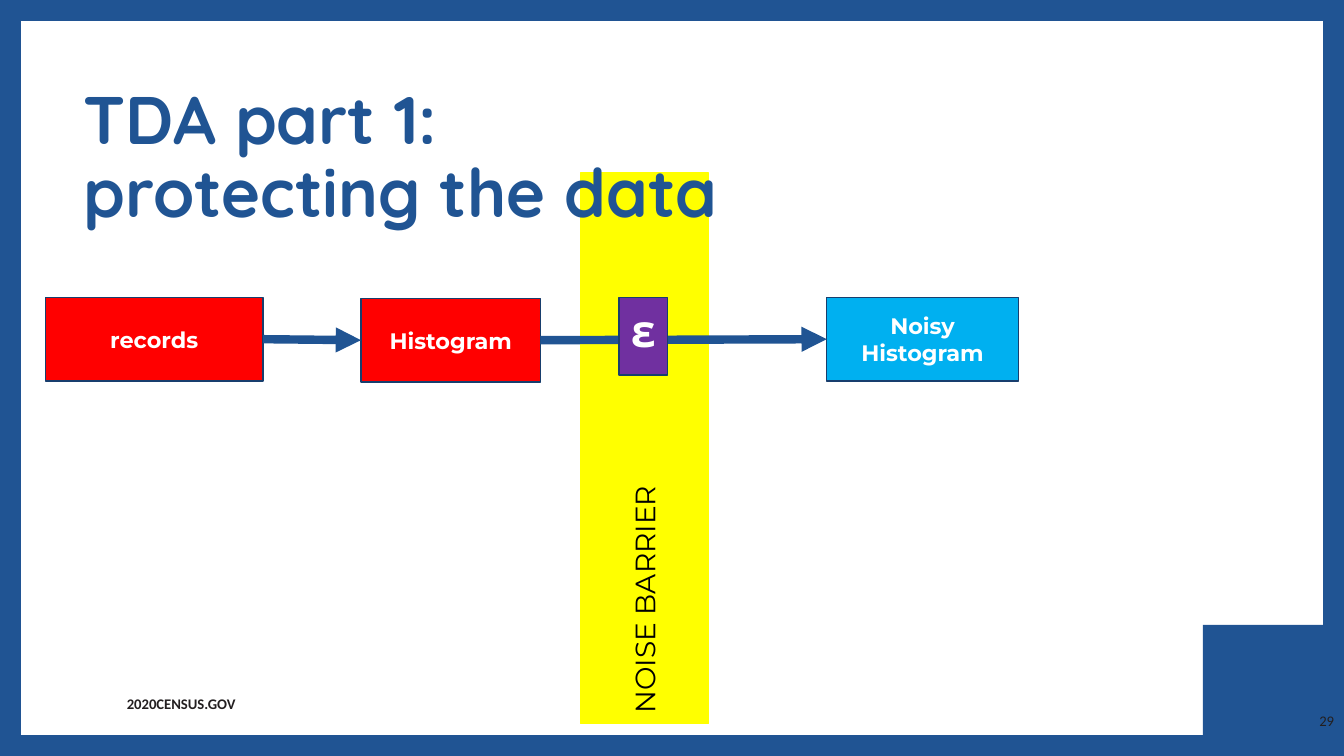
from dataclasses import dataclass

import pptx
import pptx.dml.color
import pptx.enum.shapes
import pptx.enum.text
import pptx.oxml
import pptx.oxml.ns
import pptx.util
from pptx.util import Inches

ALIGN = pptx.enum.text.PP_ALIGN
ANCHOR = pptx.enum.text.MSO_ANCHOR
LEFT_SITE, RIGHT_SITE = 1, 3


@dataclass(frozen=True)
class Theme:
    blue: str = "205493"
    white: str = "FFFFFF"
    black: str = "000000"
    ink: str = "231F20"
    outline: str = "183E6D"
    private: str = "FF0000"
    noisy: str = "00B0F0"
    epsilon: str = "7030A0"
    barrier: str = "FFFF00"
    title_font: str = "Quicksand"
    body_font: str = "Montserrat"
    footer_font: str = "Calibri"
    title_size: float = 48
    epsilon_size: float = 32
    barrier_size: float = 20
    step_size: float = 16
    footer_size: float = 10.5
    arrow_width: float = 6


THEME = Theme()


def color(code):
    return pptx.dml.color.RGBColor.from_string(code)


def write(box, text, font, size, ink, bold=False, align=ALIGN.LEFT,
          anchor=ANCHOR.TOP, wrap=True):
    frame = box.text_frame
    frame.text = text
    frame.word_wrap = wrap
    frame.vertical_anchor = anchor
    para = frame.paragraphs[0]
    para.alignment = align
    for span in para.runs:
        span.font.name = font
        span.font.size = pptx.util.Pt(size)
        span.font.bold = bold
        span.font.color.rgb = color(ink)
    return para


def add_rectangle(page, left, top, width, height, fill, line=None):
    box = page.shapes.add_shape(
        pptx.enum.shapes.MSO_SHAPE.RECTANGLE,
        Inches(left), Inches(top), Inches(width), Inches(height))
    box.shadow.inherit = False
    box.fill.solid()
    box.fill.fore_color.rgb = color(fill)
    if line:
        box.line.color.rgb = color(line)
        box.line.width = pptx.util.Pt(1)
    else:
        box.line.fill.background()
    return box


def add_text_box(page, left, top, width, height):
    return page.shapes.add_textbox(
        Inches(left), Inches(top), Inches(width), Inches(height))


def add_step(page, left, top, width, height, text, fill,
             size=THEME.step_size, anchor=ANCHOR.MIDDLE):
    """Add one labelled box of the data flow."""
    step = add_rectangle(page, left, top, width, height, fill, THEME.outline)
    write(step, text, THEME.body_font, size, THEME.white, bold=True,
          align=ALIGN.CENTER, anchor=anchor)
    return step


def add_arrow(page, source, target):
    arrow = page.shapes.add_connector(
        pptx.enum.shapes.MSO_CONNECTOR.STRAIGHT, 0, 0, 0, 0)
    arrow.begin_connect(source, RIGHT_SITE)
    arrow.end_connect(target, LEFT_SITE)
    arrow.line.color.rgb = color(THEME.blue)
    arrow.line.width = pptx.util.Pt(THEME.arrow_width)
    head = pptx.oxml.parse_xml(
        f'<a:tailEnd {pptx.oxml.ns.nsdecls("a")} type="triangle"/>')
    arrow.line._get_or_add_ln().append(head)
    arrow._element.spPr.append(pptx.oxml.parse_xml(
        f'<a:effectLst {pptx.oxml.ns.nsdecls("a")}/>'))


def draw_frame(page, width, height, border=0.21):
    """Fill the page with a blue border, white panel and blue corner."""
    page.background.fill.solid()
    page.background.fill.fore_color.rgb = color(THEME.blue)
    add_rectangle(page, border, border, width - 2 * border,
                  height - 2 * border, THEME.white)
    corner_width, corner_height = 1.4, 1.3
    add_rectangle(page, width - corner_width, height - corner_height,
                  corner_width, corner_height, THEME.blue)


def draw_footer(page, width, top):
    site = add_text_box(page, 1.16, top, 1.31, 0.28)
    write(site, "2020CENSUS.GOV", THEME.footer_font, THEME.footer_size,
          THEME.ink, bold=True, wrap=False)
    number_width = 2.83
    number = add_text_box(page, width - number_width, top + 0.11,
                          number_width, 0.39)
    write(number, "29", THEME.footer_font, THEME.footer_size, THEME.ink,
          align=ALIGN.RIGHT, anchor=ANCHOR.MIDDLE)


def draw_barrier(page, left, top, length, thickness):
    barrier = add_rectangle(page, left, top, length, thickness,
                            THEME.barrier, THEME.barrier)
    barrier.rotation = 270
    write(barrier, "NOISE BARRIER", THEME.body_font, THEME.barrier_size,
          THEME.black, anchor=ANCHOR.MIDDLE)


def draw_title(page, left, top, width, height):
    title = add_text_box(page, left, top, width, height)
    para = write(title, "TDA part 1:\vprotecting the data", THEME.title_font,
                 THEME.title_size, THEME.blue, bold=True)
    para.line_spacing = 0.9


def draw_flow(page, left, top, height):
    """Draw records, histogram, epsilon and noisy histogram in a row."""
    records = add_step(page, left, top, 2.16, height, "records",
                       THEME.private)
    histogram = add_step(page, left + 3.13, top + 0.01, 1.78, height,
                         "Histogram", THEME.private)
    noisy = add_step(page, left + 7.75, top, 1.9, height, "Noisy Histogram",
                     THEME.noisy)
    add_arrow(page, records, histogram)
    add_arrow(page, histogram, noisy)
    add_step(page, left + 5.69, top, 0.48, height - 0.06, "ε", THEME.epsilon,
             THEME.epsilon_size, ANCHOR.TOP)


def main():
    width, height = 13.33, 7.5
    deck = pptx.Presentation()
    deck.slide_width = Inches(width)
    deck.slide_height = Inches(height)
    page = deck.slides.add_slide(deck.slide_layouts[6])
    draw_frame(page, width, height)
    draw_barrier(page, 3.66, 3.81, 5.46, 1.27)
    draw_title(page, 0.73, 0.81, 11.71, 1.45)
    draw_footer(page, width, 6.84)
    draw_flow(page, 0.45, 2.95, 0.83)
    deck.save("out.pptx")


if __name__ == "__main__":
    main()
